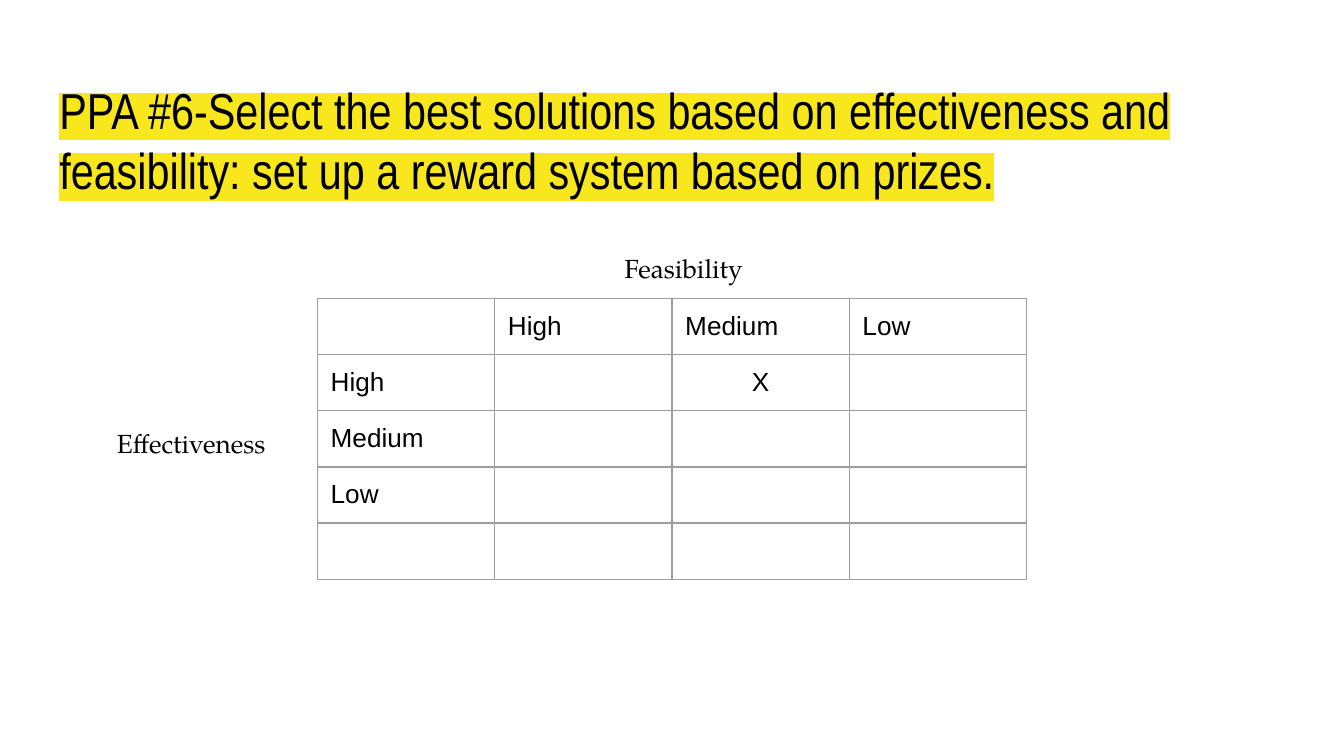
from lxml import etree
from pptx import Presentation
from pptx import util as u
from pptx.dml.color import RGBColor
from pptx.enum import text
from pptx.oxml import parse_xml
from pptx.oxml.ns import nsdecls, qn

MARGIN = u.Cm(0.25)


def format_text(paragraph, font_name, size, alignment=text.PP_ALIGN.LEFT):
    paragraph.alignment = alignment
    for run in paragraph.runs:
        run.font.name = font_name
        run.font.size = u.Pt(size)
        run.font.color.rgb = RGBColor.from_string("000000")


def set_margins(box):
    """Give a text frame or table cell the same inset on every side."""
    box.margin_left = box.margin_right = MARGIN
    box.margin_top = box.margin_bottom = MARGIN


presentation = Presentation()
presentation.slide_width = u.Cm(25.4)
presentation.slide_height = u.Cm(14.28)
slide = presentation.slides.add_slide(presentation.slide_layouts[5])

# Highlighted title
title = slide.shapes.title
title.left, title.top = u.Cm(0.87), u.Cm(1.24)
title.width, title.height = u.Cm(23.67), u.Cm(1.6)
frame = title.text_frame
frame.text = (
    "PPA #6-Select the best solutions based on effectiveness and "
    "feasibility: set up a reward system based on prizes."
)
frame.word_wrap = True
frame.auto_size = text.MSO_AUTO_SIZE.NONE
frame.vertical_anchor = text.MSO_ANCHOR.TOP
set_margins(frame)
format_text(frame.paragraphs[0], "Arial Narrow", 27)
run_properties = frame.paragraphs[0].runs[0].font._element
highlight = parse_xml(
    f'<a:highlight {nsdecls("a")}><a:srgbClr val="F8E71C"/></a:highlight>'
)
run_properties.find(qn("a:solidFill")).addnext(highlight)

# Feasibility and effectiveness matrix
rows = [
    ["", "High", "Medium", "Low"],
    ["High", "", "X", ""],
    ["Medium", "", "", ""],
    ["Low", "", "", ""],
    ["", "", "", ""],
]
column_width, row_height = u.Cm(3.35), u.Cm(1.06)
table = slide.shapes.add_table(
    len(rows), len(rows[0]), u.Cm(6), u.Cm(5.64),
    column_width * len(rows[0]), row_height * len(rows),
).table
table.first_row = table.horz_banding = False

for row_index, row in enumerate(rows):
    for column_index, label in enumerate(row):
        cell = table.cell(row_index, column_index)
        cell.fill.background()
        if label:
            cell.text = label
            set_margins(cell)
            alignment = text.PP_ALIGN.CENTER if label == "X" else text.PP_ALIGN.LEFT
            format_text(cell.text_frame.paragraphs[0], "Arial", 14, alignment)
        cell_properties = cell._tc.get_or_add_tcPr()
        for index, side in enumerate(("lnL", "lnR", "lnT", "lnB")):
            border = etree.fromstring(
                f'<a:{side} {nsdecls("a")} w="{u.Pt(0.75)}"><a:solidFill>'
                f'<a:srgbClr val="9E9E9E"/></a:solidFill></a:{side}>'
            )
            cell_properties.insert(index, border)

# Axis labels
axis_labels = [
    ("Feasibility", 7.7, 4.52, 10.44),
    ("Effectiveness", 1.85, 7.82, 3.53),
]
for label, left, top, width in axis_labels:
    box = slide.shapes.add_textbox(u.Cm(left), u.Cm(top), u.Cm(width), u.Cm(1.12))
    frame = box.text_frame
    frame.text = label
    frame.word_wrap = True
    frame.auto_size = text.MSO_AUTO_SIZE.SHAPE_TO_FIT_TEXT
    set_margins(frame)
    format_text(frame.paragraphs[0], "TeX Gyre Pagella", 14, text.PP_ALIGN.CENTER)

presentation.save("out.pptx")
